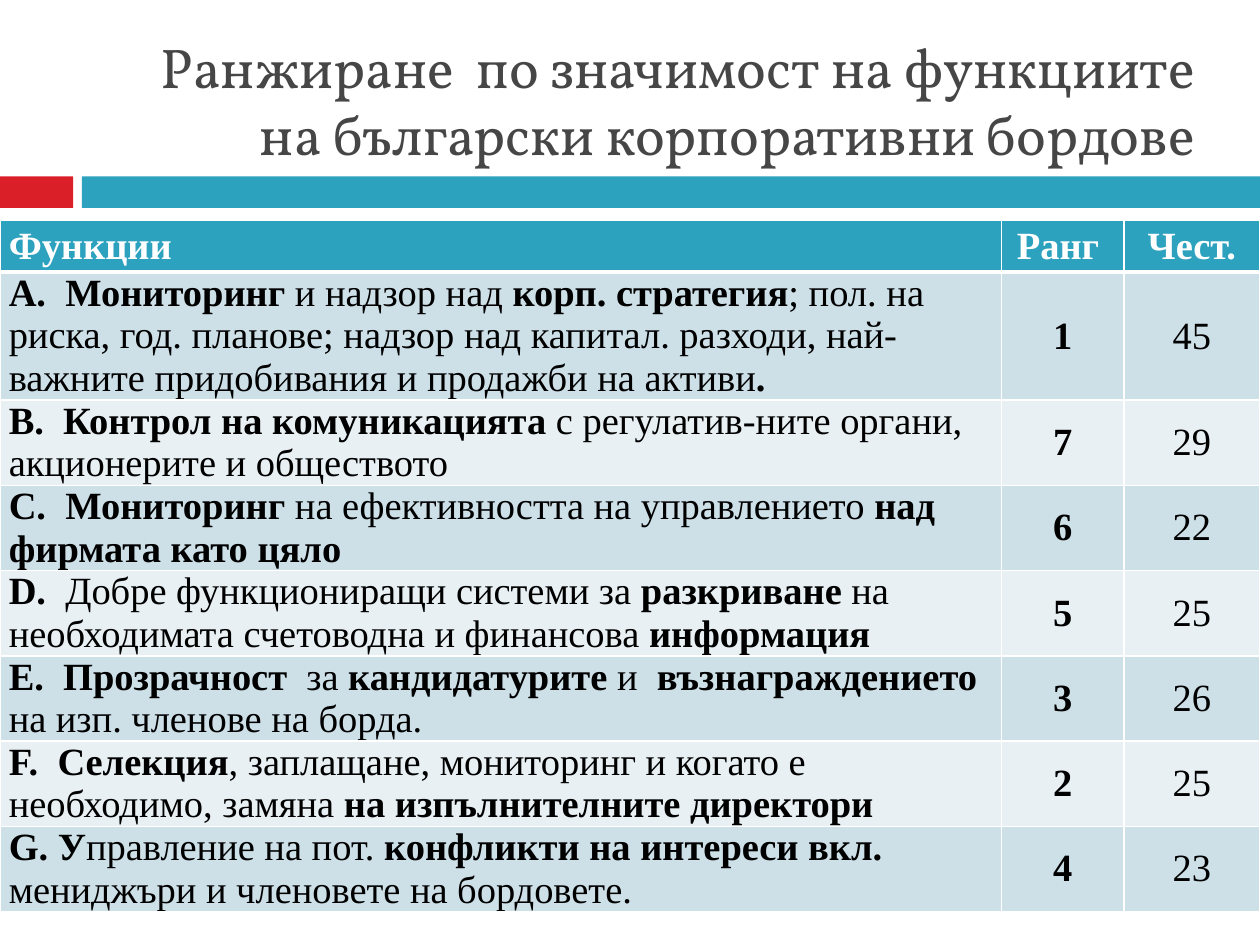
from lxml.etree import SubElement
from pptx import Presentation
from pptx.dml.color import RGBColor as RGB
from pptx.enum.shapes import MSO_SHAPE as SHAPE
from pptx.enum.text import MSO_ANCHOR as ANCHOR, PP_ALIGN as ALIGN
from pptx.oxml.ns import qn
from pptx.util import Inches, Pt

COLORS = {"red": "DA1F28", "teal": "2DA2BF", "title": "464646", "white": "FFFFFF",
          "black": "000000", "odd": "CDE0E8", "even": "E8F0F4"}
COLUMNS = (7.95, 0.97, 1.08)
ROW_HEIGHT = 0.41
HEADER = ("*Функции*", "*Ранг *", "*Чест.*")
FUNCTIONS = (
    ("*A.  Мониторинг* и надзор над *корп. стратегия*; пол. на риска, год. планове; "
     "надзор над капитал. разходи, най-важните придобивания и продажби на активи*.*", 1, 45),
    ("*B.  Контрол на комуникацията* с регулатив-ните органи, акционерите и обществото", 7, 29),
    ("*C.  Мониторинг* на ефективността на управлението *над фирмата като цяло*", 6, 22),
    ("*D.  *Добре функциониращи системи за *разкриване* на необходимата счетоводна "
     "и финансова *информация*", 5, 25),
    ("*E.  Прозрачност*  за *кандидатурите *и  *възнаграждението* на изп. членове "
     "на борда.", 3, 26),
    ("*F.  Селекция*, заплащане, мониторинг и когато е необходимо, замяна "
     "*на изпълнителните директори*", 2, 25),
    ("*G. У*правление на пот. *конфликти на интереси вкл.* мениджъри и членовете "
     "на бордовете.", 4, 23),
)


def apply(obj, formats):
    """Set each attribute named in a dict of format values."""
    for name, value in formats.items():
        setattr(obj, name, value)


def add_runs(p, text, size, font, color):
    """Write text into a paragraph, with the parts between asterisks in bold."""
    for i, part in enumerate(text.split("*")):
        if part:
            r = p.add_run()
            r.text = part
            apply(r.font, {"size": Pt(size), "name": font, "bold": i % 2 == 1})
            r.font.color.rgb = RGB.from_string(COLORS[color])


def add_title(s, text):
    """Place the title above the bar, aligned right."""
    sp = s.shapes.title
    apply(sp, {"left": Inches(0.67), "top": Inches(0.25),
               "width": Inches(8.92), "height": Inches(1.08)})
    sp.text_frame.vertical_anchor = ANCHOR.MIDDLE
    p = sp.text_frame.paragraphs[0]
    p.alignment = ALIGN.RIGHT
    add_runs(p, text, 32, "Vollkorn", "title")


def add_bar(s, left, width, color):
    """Draw one part of the bar below the title."""
    sp = s.shapes.add_shape(SHAPE.RECTANGLE, Inches(left), Inches(1.4),
                            Inches(width), Inches(0.25))
    sp.shadow.inherit = False
    sp.fill.solid()
    sp.fill.fore_color.rgb = RGB.from_string(COLORS[color])
    sp.line.fill.background()


def set_borders(cell, widths):
    """Give a cell white borders, left, right, top and bottom."""
    tc_pr = cell._tc.get_or_add_tcPr()
    for i, (side, width) in enumerate(zip("LRTB", widths)):
        ln = SubElement(tc_pr, qn(f"a:ln{side}"), w=str(Pt(width)))
        fill = SubElement(ln, qn("a:solidFill"))
        SubElement(fill, qn("a:srgbClr"), val=COLORS["white"])
        tc_pr.remove(ln)
        tc_pr.insert(i, ln)


def fill_cell(cell, text, row, col):
    """Write and format a cell by its place in the table."""
    header, first = row == 0, col == 0
    apply(cell, {"margin_left": Inches(0.07), "margin_right": Inches(0.07),
                 "margin_top": 0, "margin_bottom": 0,
                 "vertical_anchor": ANCHOR.TOP if first and not header else ANCHOR.MIDDLE})
    cell.fill.solid()
    fill = "teal" if header else "odd" if row % 2 else "even"
    cell.fill.fore_color.rgb = RGB.from_string(COLORS[fill])
    p = cell.text_frame.paragraphs[0]
    p.alignment = ALIGN.LEFT if first else ALIGN.CENTER
    if first and not header:
        apply(p._p.get_or_add_pPr(), {"marL": Inches(0.22), "indent": Inches(-0.2)})
    add_runs(p, text, 22, "Times New Roman", "white" if header else "black")
    set_borders(cell, (1, 1, 3 if row == 1 else 1, 3 if header else 1))


def add_ranking(s):
    """Build the table of functions with rank and frequency."""
    rows = [HEADER] + [(text, f"*{rank}*", str(count)) for text, rank, count in FUNCTIONS]
    frame = s.shapes.add_table(len(rows), len(COLUMNS), 0, Inches(1.75),
                               Inches(sum(COLUMNS)), Inches(ROW_HEIGHT * len(rows)))
    table = frame.table
    for column, width in zip(table.columns, COLUMNS):
        column.width = Inches(width)
    for i, row in enumerate(rows):
        for j, text in enumerate(row):
            fill_cell(table.cell(i, j), text, i, j)


def main():
    """Build the slide and save it."""
    prs = Presentation()
    apply(prs, {"slide_width": Inches(10), "slide_height": Inches(7.5)})
    s = prs.slides.add_slide(prs.slide_layouts[5])
    add_bar(s, 0, 0.58, "red")
    add_bar(s, 0.65, 9.35, "teal")
    add_title(s, "Ранжиране  по значимост на функциите на български корпоративни бордове")
    add_ranking(s)
    prs.save("out.pptx")


if __name__ == "__main__":
    main()
